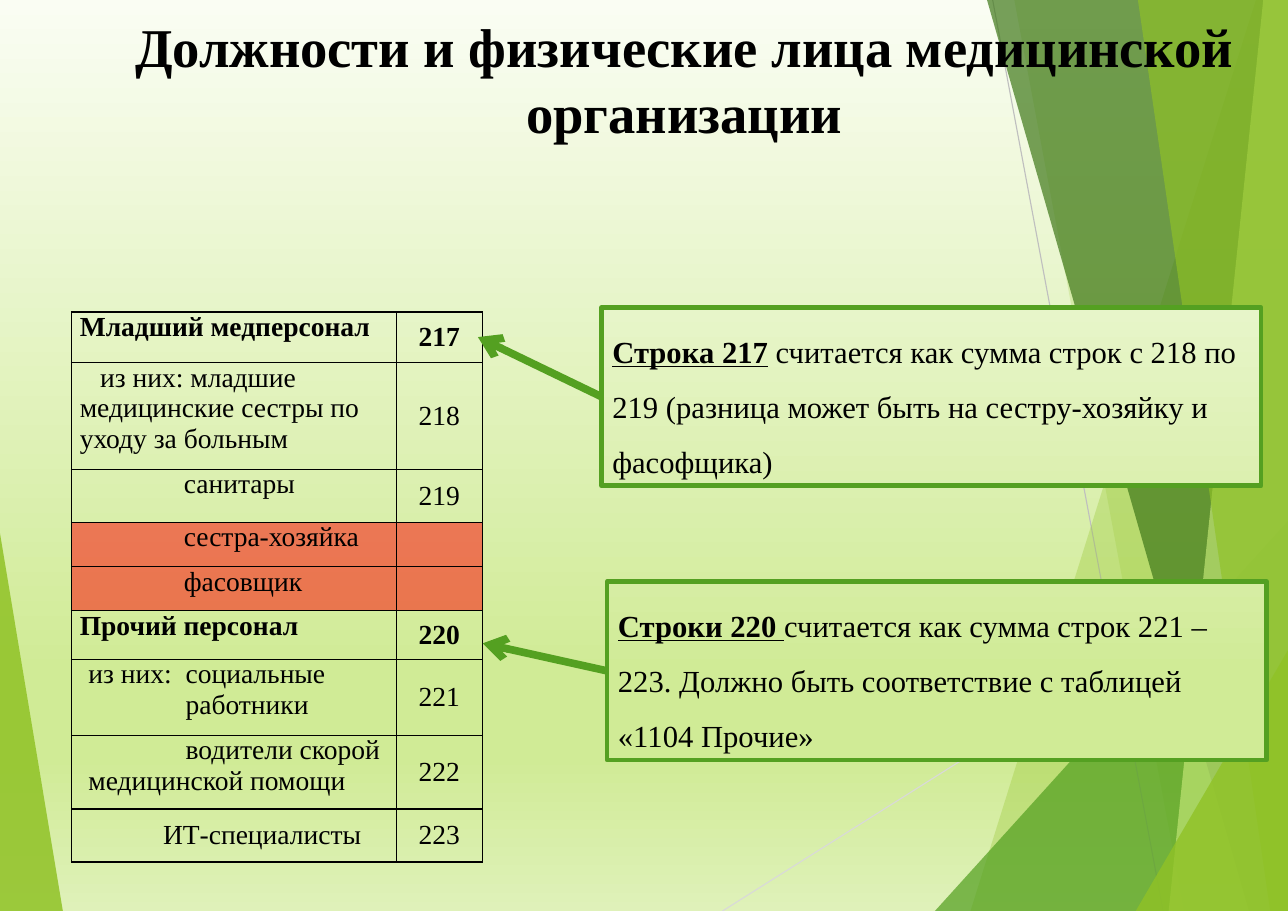
from lxml import etree
from pptx import Presentation
from pptx.dml.color import RGBColor
from pptx.enum.shapes import MSO_CONNECTOR, MSO_SHAPE
from pptx.enum.text import MSO_ANCHOR, PP_ALIGN
from pptx.oxml.ns import qn
from pptx.util import Cm, Pt

STRAIGHT = MSO_CONNECTOR.STRAIGHT
RECTANGLE = MSO_SHAPE.RECTANGLE
TOP, MIDDLE = MSO_ANCHOR.TOP, MSO_ANCHOR.MIDDLE
LEFT, CENTER = PP_ALIGN.LEFT, PP_ALIGN.CENTER

BLACK = RGBColor(0x00, 0x00, 0x00)
RED = RGBColor(0xFF, 0x00, 0x00)
LIME = RGBColor(0x90, 0xC2, 0x26)
GREEN = RGBColor(0x54, 0xA0, 0x21)
DARK_GREEN = RGBColor(0x3F, 0x78, 0x19)
PALE_LIME = RGBColor(0xC0, 0xE4, 0x74)
LIGHT_GRAY = RGBColor(0xD9, 0xD9, 0xD9)
GRAY = RGBColor(0xBF, 0xBF, 0xBF)
BACKDROP = [
    (0, RGBColor(0xFA, 0xFD, 0xF3)),
    (74, RGBColor(0xD0, 0xEB, 0x96)),
    (83, RGBColor(0xD0, 0xEB, 0x96)),
    (100, RGBColor(0xDF, 0xF1, 0xB9)),
]

WIDTH, HEIGHT = 29.7, 21

# Outline points, colour, opacity in percent
FACETS = [
    ([(28.96, 0), (22.38, HEIGHT), (WIDTH, HEIGHT), (WIDTH, 0)], LIME, 30),
    ([(23.39, 0), (27.31, HEIGHT), (WIDTH, HEIGHT), (WIDTH, 0)], LIME, 20),
    ([(21.56, HEIGHT), (WIDTH, 12.01), (WIDTH, HEIGHT)], GREEN, 72),
    ([(22.76, 0), (28.8, HEIGHT), (WIDTH, HEIGHT), (WIDTH, 0)], DARK_GREEN, 70),
    ([(29.13, 0), (26.95, HEIGHT), (WIDTH, HEIGHT), (WIDTH, 0)], PALE_LIME, 70),
    ([(26.24, 0), (29.29, HEIGHT), (WIDTH, HEIGHT), (WIDTH, 0)], LIME, 65),
    ([(26.19, HEIGHT), (WIDTH, 14.99), (WIDTH, HEIGHT)], LIME, 80),
]

# Row height, row number, then paragraphs: text, left margin, first-line indent
STAFF_ROWS = [
    (1.17, "217", [("Младший медперсонал", 0, 0)]),
    (2.46, "218", [("из них: младшие медицинские сестры по уходу за больным", 0, 0.47)]),
    (1.22, "219", [("санитары", 2.4, 0)]),
    (1.02, "", [("сестра-хозяйка", 2.4, 0)]),
    (1.02, "", [("фасовщик", 2.4, 0)]),
    (1.12, "220", [("Прочий персонал", 0, 0)]),
    (1.75, "221", [("из них:\tсоциальные", 2.44, -2.24), ("работники", 2.44, 0)]),
    (1.7, "222", [("водители скорой медицинской помощи", 0.2, 2.24)]),
    (1.22, "223", [("ИТ-специалисты", 1.3, 0)]),
]
TOTAL_ROWS = ("217", "220")
CENTERED_ROW = "223"

# Box left and top, arrow tip, underlined lead, explanation
RULES = [
    ((13.87, 7.09), (11.02, 7.77), "Строка 217",
     " считается как сумма строк с 218 по 219 "
     "(разница может быть на сестру-хозяйку и фасофщика)"),
    ((14, 13.41), (11.13, 14.83), "Строки 220 ",
     "считается как сумма строк 221 – 223. "
     "Должно быть соответствие с таблицей «1104 Прочие»"),
]
RULE_WIDTH, RULE_HEIGHT = 15.21, 4.11


def write(paragraph, text, size=18, bold=False, underline=False, align=LEFT,
          spacing=None, margin=0, indent=0):
    run = paragraph.add_run()
    run.text = text
    font = run.font
    font.name, font.size, font.color.rgb = "Times New Roman", Pt(size), BLACK
    font.bold, font.underline = bold, underline
    paragraph.alignment = align
    paragraph.line_spacing = spacing
    properties = paragraph._p.get_or_add_pPr()
    properties.set("marL", str(Cm(margin)))
    properties.set("indent", str(Cm(indent)))


def set_opacity(element, percent):
    """Make the last solid colour inside the element translucent."""
    colour = element.xpath(".//a:solidFill/a:srgbClr")[-1]
    etree.SubElement(colour, qn("a:alpha"), val=str(percent * 1000))


def backdrop_between(top, bottom):
    """Return the gradient stops of the part of the backdrop between two heights."""
    start, end = 100 * top / HEIGHT, 100 * bottom / HEIGHT

    def colour_at(position):
        for (low, first), (high, second) in zip(BACKDROP, BACKDROP[1:]):
            if position <= high:
                share = (position - low) / (high - low)
                return RGBColor(*(round(a + (b - a) * share) for a, b in zip(first, second)))

    inner = [position for position, _ in BACKDROP if start < position < end]
    return [(100 * (position - start) / (end - start), colour_at(position))
            for position in [start, *inner, end]]


def fill_gradient(fill, element, stops):
    fill.gradient()
    fill.gradient_angle = 270
    stop_list = next(element.iter(qn("a:gsLst")))
    for old_stop in list(stop_list):
        stop_list.remove(old_stop)
    for position, colour in stops:
        stop = etree.SubElement(stop_list, qn("a:gs"), pos=str(round(position * 1000)))
        etree.SubElement(stop, qn("a:srgbClr"), val=str(colour))


class StaffSlide:
    def __init__(self, presentation):
        self.slide = presentation.slides.add_slide(presentation.slide_layouts[6])
        self.shapes = self.slide.shapes
        fill_gradient(self.slide.background.fill, self.slide.element, BACKDROP)

    def facet(self, points, colour, opacity):
        corners = [(Cm(x), Cm(y)) for x, y in points]
        builder = self.shapes.build_freeform(*corners[0])
        builder.add_line_segments(corners[1:])
        facet = builder.convert_to_shape()
        facet.shadow.inherit = False
        facet.fill.solid()
        facet.fill.fore_color.rgb = colour
        set_opacity(facet.element, opacity)
        facet.line.fill.background()

    def line(self, start, end, colour, width, arrow=False):
        line = self.shapes.add_connector(STRAIGHT, *map(Cm, start + end))
        line.line.color.rgb = colour
        line.line.width = Pt(width)
        if arrow:
            etree.SubElement(line.line._get_or_add_ln(), qn("a:tailEnd"), type="arrow")
        etree.SubElement(line.element.spPr, qn("a:effectLst"))

    def title(self, text):
        frame = self.shapes.add_textbox(Cm(1.85), 0, Cm(27.86), Cm(2.41)).text_frame
        frame.word_wrap = True
        frame.margin_top = Cm(0.3)
        write(frame.paragraphs[0], text, size=35.7, bold=True, align=CENTER)

    def rule_box(self, left, top, lead, explanation):
        box = self.shapes.add_shape(
            RECTANGLE, Cm(left), Cm(top), Cm(RULE_WIDTH), Cm(RULE_HEIGHT))
        box.shadow.inherit = False
        fill_gradient(box.fill, box.element, backdrop_between(top, top + RULE_HEIGHT))
        box.line.color.rgb = GREEN
        box.line.width = Pt(3)
        frame = box.text_frame
        frame.word_wrap = True
        frame.vertical_anchor = MIDDLE
        paragraph = frame.paragraphs[0]
        write(paragraph, lead, size=20, bold=True, underline=True, spacing=1.5)
        write(paragraph, explanation, size=20, spacing=1.5)

    def style_cell(self, cell, anchor, highlighted):
        cell.margin_left = cell.margin_right = Cm(0.19)
        cell.margin_top = cell.margin_bottom = 0
        cell.vertical_anchor = anchor
        properties = cell._tc.get_or_add_tcPr()
        for side in ("a:lnL", "a:lnR", "a:lnT", "a:lnB"):
            border = etree.SubElement(properties, qn(side), w=str(Pt(1)))
            solid = etree.SubElement(border, qn("a:solidFill"))
            etree.SubElement(solid, qn("a:srgbClr"), val=str(BLACK))
        if highlighted:
            cell.fill.solid()
            cell.fill.fore_color.rgb = RED
            set_opacity(cell._tc, 50)
        else:
            cell.fill.background()

    def staff_table(self, rows):
        total_height = sum(height for height, _, _ in rows)
        table = self.shapes.add_table(
            len(rows), 2, Cm(1.65), Cm(7.19), Cm(9.47), Cm(total_height)).table
        table.first_row = table.horz_banding = False
        table.columns[0].width, table.columns[1].width = Cm(7.49), Cm(1.98)
        for index, (height, number, paragraphs) in enumerate(rows):
            table.rows[index].height = Cm(height)
            bold = number in TOTAL_ROWS
            centered = number == CENTERED_ROW
            post, code = table.cell(index, 0), table.cell(index, 1)
            for order, (text, margin, indent) in enumerate(paragraphs):
                frame = post.text_frame
                paragraph = frame.add_paragraph() if order else frame.paragraphs[0]
                write(paragraph, text, bold=bold, margin=margin, indent=indent,
                      align=CENTER if centered else LEFT)
            if number:
                write(code.text_frame.paragraphs[0], number, bold=bold, align=CENTER)
            self.style_cell(post, MIDDLE if centered else TOP, not number)
            self.style_cell(code, MIDDLE, not number)


def main():
    presentation = Presentation()
    presentation.slide_width, presentation.slide_height = Cm(WIDTH), Cm(HEIGHT)
    slide = StaffSlide(presentation)
    slide.facet([(0, 12.29), (0, HEIGHT), (1.45, HEIGHT)], LIME, 85)
    slide.line((16.66, HEIGHT), (WIDTH, 12.78), LIGHT_GRAY, 0.75)
    slide.line((22.89, 0), (26.82, HEIGHT), GRAY, 0.75)
    for points, colour, opacity in FACETS:
        slide.facet(points, colour, opacity)
    slide.title("Должности и физические лица медицинской организации")
    slide.staff_table(STAFF_ROWS)
    for (left, top), tip, lead, explanation in RULES:
        slide.rule_box(left, top, lead, explanation)
        slide.line((left, top + RULE_HEIGHT / 2), tip, GREEN, 5, arrow=True)
    presentation.save("out.pptx")


if __name__ == "__main__":
    main()
